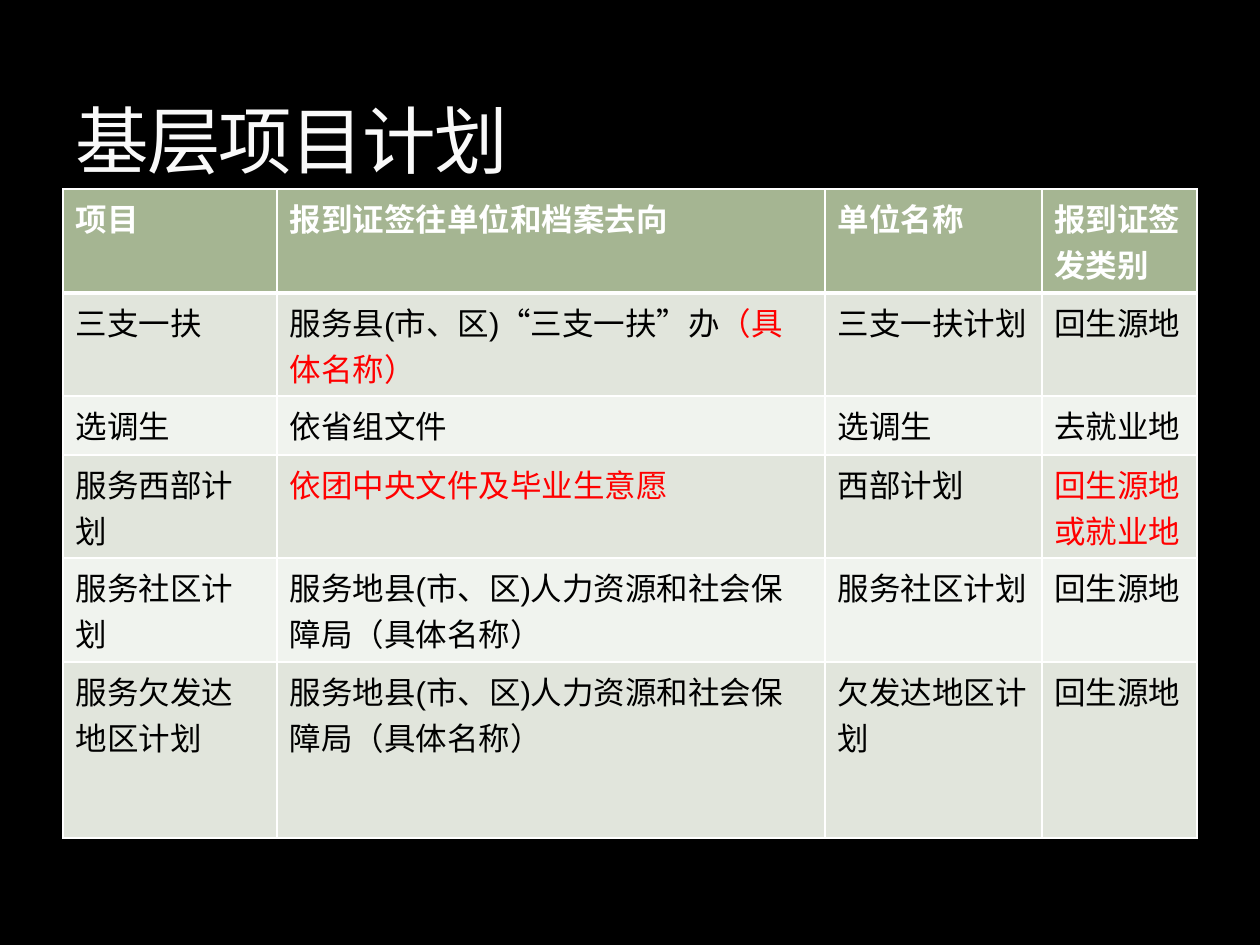
import pptx
import pptx.dml.color
import pptx.enum.lang
import pptx.enum.text
import pptx.oxml
import pptx.oxml.ns
import pptx.util

TITLE = "基层项目计划"
HEADER = ["项目", "报到证签往单位和档案去向", "单位名称", "报到证签发类别"]
BUREAU = "服务地县(市、区)人力资源和社会保障局（具体名称）"
# A cell is a string, or a list of (text, colour name) runs.
PROGRAMMES = [
    ["三支一扶",
     [("服务县(市、区)“三支一扶”办", "body"), ("（具体名称）", "alert")],
     "三支一扶计划", "回生源地"],
    ["选调生", "依省组文件", "选调生", "去就业地"],
    ["服务西部计划", [("依团中央文件及毕业生意愿", "alert")],
     "西部计划", [("回生源地或就业地", "alert")]],
    ["服务社区计划", BUREAU, "服务社区计划", "回生源地"],
    ["服务欠发达地区计划", BUREAU, "欠发达地区计划", "回生源地"],
]

THEME = {
    "background": "000000", "title": "F9F9F9", "header": "FFFFFF",
    "body": "000000", "alert": "FF0000", "border": "FFFFFF",
    "header_fill": "A5B592", "bands": ("E1E5DC", "F0F3EE"),
    "title_font": "Cambria", "table_font": "Arial",
    "title_size": 42, "table_size": 18,
}

SLIDE_SIZE = (1260, 945)
TITLE_BOX = (63, 21, 1134, 168)
TABLE_ORIGIN = (63, 189)
COLUMN_WIDTHS = [214, 548, 217, 155]
ROW_HEIGHTS = [104, 103, 59, 103, 104, 176]


def px(length):
    return pptx.util.Emu(length * 914400 // 126)


def rgb(name):
    return pptx.dml.color.RGBColor.from_string(THEME.get(name, name))


def add_text(paragraph, text, *, font, size, color, bold=False, spacing=0):
    run = paragraph.add_run()
    run.text = text
    run.font.name = font
    run.font.size = pptx.util.Pt(size)
    run.font.bold = bold
    run.font.color.rgb = rgb(color)
    run.font.language_id = pptx.enum.lang.MSO_LANGUAGE_ID.SIMPLIFIED_CHINESE
    if spacing:
        run.font._element.set("spc", str(spacing * 100))


def set_borders(cell, **widths):
    """Draw cell borders; widths are points keyed by L, R, T and B."""
    properties = cell._tc.get_or_add_tcPr()
    for position, (side, width) in enumerate(widths.items()):
        properties.insert(position, pptx.oxml.parse_xml(
            f'<a:ln{side} {pptx.oxml.ns.nsdecls("a")} w="{width * 12700}">'
            f'<a:solidFill><a:srgbClr val="{THEME["border"]}"/></a:solidFill>'
            f'</a:ln{side}>'))


def add_title(slide):
    frame = slide.shapes.add_textbox(*map(px, TITLE_BOX)).text_frame
    frame.word_wrap = True
    frame.vertical_anchor = pptx.enum.text.MSO_ANCHOR.BOTTOM
    add_text(frame.paragraphs[0], TITLE, font=THEME["title_font"],
             size=THEME["title_size"], color="title", spacing=-1)


def add_programme_table(slide):
    rows = [HEADER] + PROGRAMMES
    table = slide.shapes.add_table(
        len(rows), len(HEADER), *map(px, TABLE_ORIGIN),
        px(sum(COLUMN_WIDTHS)), px(sum(ROW_HEIGHTS))).table
    for column, width in zip(table.columns, COLUMN_WIDTHS):
        column.width = px(width)
    for row, height in zip(table.rows, ROW_HEIGHTS):
        row.height = px(height)

    for r, row in enumerate(rows):
        is_header = r == 0
        fill = THEME["header_fill"] if is_header else THEME["bands"][(r - 1) % 2]
        for c, content in enumerate(row):
            cell = table.cell(r, c)
            cell.fill.solid()
            cell.fill.fore_color.rgb = rgb(fill)
            set_borders(cell, L=1, R=1, T=3 if r == 1 else 1, B=3 if is_header else 1)
            if isinstance(content, str):
                content = [(content, "header" if is_header else "body")]
            for text, color in content:
                add_text(cell.text_frame.paragraphs[0], text, font=THEME["table_font"],
                         size=THEME["table_size"], color=color, bold=is_header)


def main():
    deck = pptx.Presentation()
    deck.slide_width, deck.slide_height = map(px, SLIDE_SIZE)
    slide = deck.slides.add_slide(deck.slide_layouts[6])
    slide.background.fill.solid()
    slide.background.fill.fore_color.rgb = rgb("background")
    add_title(slide)
    add_programme_table(slide)
    deck.save("out.pptx")


if __name__ == "__main__":
    main()
